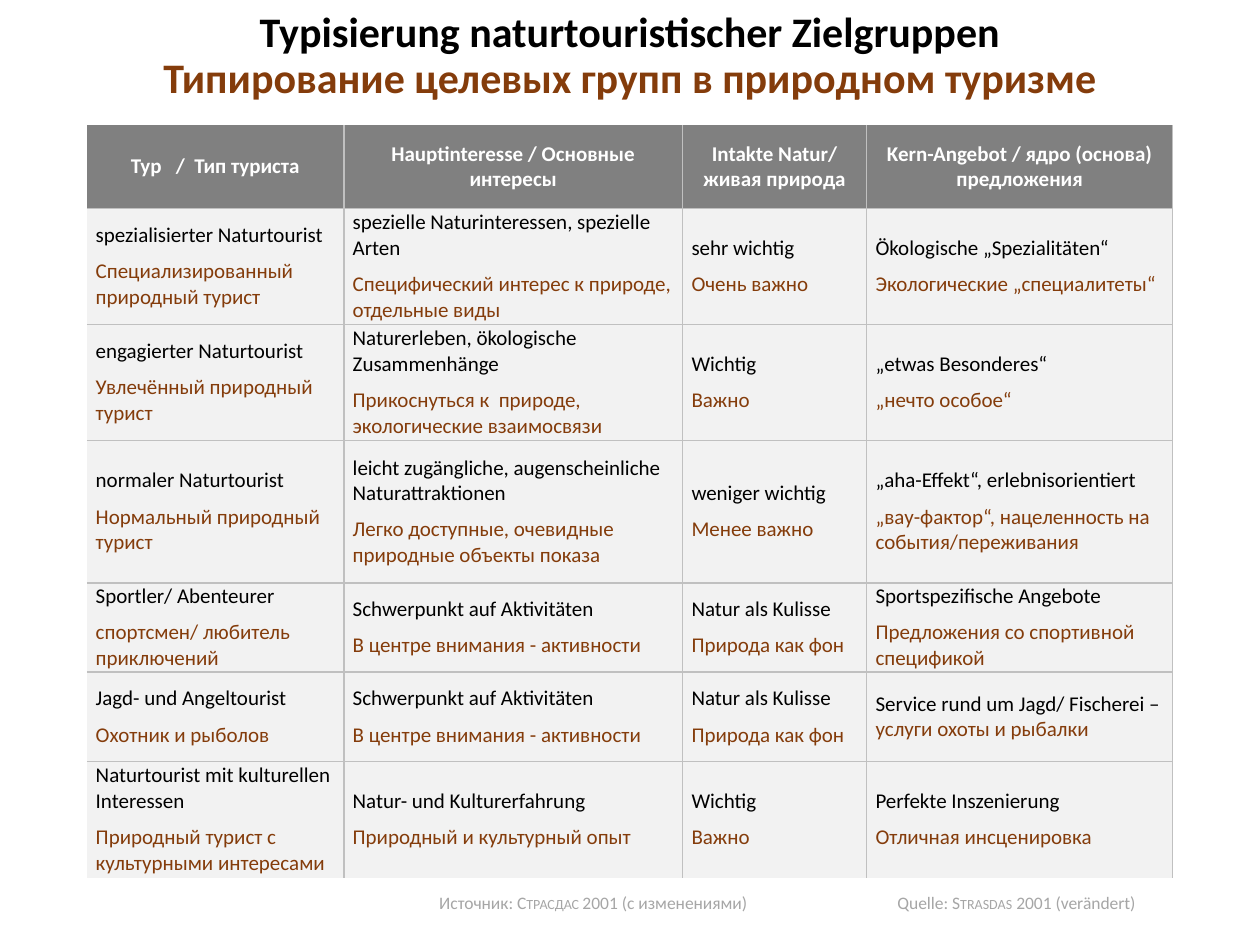
"""Build a slide with a bilingual table of nature tourism target groups."""
import dataclasses

import lxml.etree
import pptx
import pptx.dml.color
import pptx.enum.text
import pptx.oxml.ns
import pptx.util

Cm = pptx.util.Cm
Pt = pptx.util.Pt
ALIGN = pptx.enum.text.PP_ALIGN
MIDDLE = pptx.enum.text.MSO_ANCHOR.MIDDLE


@dataclasses.dataclass(frozen=True)
class Theme:
    font: str = "Calibri"
    german: str = "000000"
    russian: str = "843C0B"
    header_text: str = "FFFFFF"
    header_fill: str = "808080"
    body_fill: str = "F2F2F2"
    border: str = "C0C0C0"
    source: str = "A6A6A6"
    title_size: int = 24
    table_size: int = 12
    source_size: int = 10


TITLE = ("Typisierung naturtouristischer Zielgruppen", "Типирование целевых групп в природном туризме")
HEADERS = (
    "Typ   /  Тип туриста",
    "Hauptinteresse / Основные интересы",
    "Intakte Natur/ живая природа",
    "Kern-Angebot / ядро (основа) предложения",
)
IMPORTANT = ("Wichtig", "Важно")
ACTIVITIES = ("Schwerpunkt auf Aktivitäten", "В центре внимания - активности")
BACKDROP = ("Natur als Kulisse", "Природа как фон")
SAME_LINE_END = "– "
TOURIST_ROWS = (
    (
        ("spezialisierter Naturtourist", "Специализированный природный турист"),
        ("spezielle Naturinteressen, spezielle Arten", "Специфический интерес к природе, отдельные виды"),
        ("sehr wichtig", "Очень важно"),
        ("Ökologische „Spezialitäten“", "Экологические „специалитеты“"),
    ),
    (
        ("engagierter Naturtourist", "Увлечённый природный турист"),
        ("Naturerleben, ökologische Zusammenhänge", "Прикоснуться к  природе, экологические взаимосвязи"),
        IMPORTANT,
        ("„etwas Besonderes“", "„нечто особое“"),
    ),
    (
        ("normaler Naturtourist", "Нормальный природный турист"),
        ("leicht zugängliche, augenscheinliche Naturattraktionen",
         "Легко доступные, очевидные природные объекты показа"),
        ("weniger wichtig", "Менее важно"),
        ("„aha-Effekt“, erlebnisorientiert", "„вау-фактор“, нацеленность на события/переживания"),
    ),
    (
        ("Sportler/ Abenteurer", "спортсмен/ любитель приключений"),
        ACTIVITIES,
        BACKDROP,
        ("Sportspezifische Angebote", "Предложения со спортивной спецификой"),
    ),
    (
        ("Jagd- und Angeltourist", "Охотник и рыболов"),
        ACTIVITIES,
        BACKDROP,
        ("Service rund um Jagd/ Fischerei – ", "услуги охоты и рыбалки"),
    ),
    (
        ("Naturtourist mit kulturellen Interessen", "Природный турист с культурными интересами"),
        ("Natur- und Kulturerfahrung", "Природный и культурный опыт"),
        IMPORTANT,
        ("Perfekte Inszenierung", "Отличная инсценировка"),
    ),
)
COLUMN_WIDTHS = (5.18, 6.83, 3.71, 6.17)
ROW_HEIGHTS = (1.68, 2.34, 2.34, 2.87, 1.8, 1.8, 2.34)


class SlideBuilder:
    def __init__(self, slide, theme):
        self.slide = slide
        self.theme = theme

    def style(self, run, size, color, bold=False):
        run.font.name = self.theme.font
        run.font.size = Pt(size)
        run.font.bold = bold
        run.font.color.rgb = pptx.dml.color.RGBColor.from_string(color)

    def text_box(self, left, top, width, height):
        text_frame = self.slide.shapes.add_textbox(Cm(left), Cm(top), Cm(width), Cm(height)).text_frame
        text_frame.word_wrap = True
        return text_frame

    def title(self, lines, left, top, width, height):
        text_frame = self.text_box(left, top, width, height)
        text_frame.vertical_anchor = MIDDLE
        paragraph = text_frame.paragraphs[0]
        paragraph.text = "\v".join(lines)
        paragraph.alignment = ALIGN.CENTER
        paragraph.line_spacing = 0.9
        for run, color in zip(paragraph.runs, (self.theme.german, self.theme.russian)):
            self.style(run, self.theme.title_size, color, bold=True)

    def source(self, label, author, rest, left, top, width, height):
        paragraph = self.text_box(left, top, width, height).paragraphs[0]
        paragraph.alignment = ALIGN.RIGHT
        for text in (label, author, rest):
            run = paragraph.add_run()
            run.text = text
            self.style(run, self.theme.source_size, self.theme.source)
            if text == author:
                run.font._element.set("cap", "small")

    def borders(self, cell, sides):
        properties = cell._tc.get_or_add_tcPr()
        qn = pptx.oxml.ns.qn
        for index, (side, visible) in enumerate(sides.items()):
            line = lxml.etree.Element(qn(f"a:ln{side}"), w=str(Pt(1)))
            if visible:
                fill = lxml.etree.SubElement(line, qn("a:solidFill"))
                lxml.etree.SubElement(fill, qn("a:srgbClr"), val=self.theme.border)
            else:
                lxml.etree.SubElement(line, qn("a:noFill"))
            properties.insert(index, line)

    def cell(self, cell, paragraphs, fill, alignment, bold=False):
        cell.margin_left = cell.margin_right = Cm(0.18)
        cell.margin_top = cell.margin_bottom = 0
        cell.vertical_anchor = MIDDLE
        cell.fill.solid()
        cell.fill.fore_color.rgb = pptx.dml.color.RGBColor.from_string(fill)
        for index, runs in enumerate(paragraphs):
            paragraph = cell.text_frame.add_paragraph() if index else cell.text_frame.paragraphs[0]
            paragraph.alignment = alignment
            paragraph.space_before = paragraph.space_after = Pt(3)
            for text, color in runs:
                run = paragraph.add_run()
                run.text = text
                self.style(run, self.theme.table_size, color, bold)

    def body_paragraphs(self, german, russian):
        runs = [(german, self.theme.german), (russian, self.theme.russian)]
        return [runs] if german.endswith(SAME_LINE_END) else [[run] for run in runs]

    def table(self, headers, rows, left, top):
        table = self.slide.shapes.add_table(
            len(ROW_HEIGHTS), len(COLUMN_WIDTHS), Cm(left), Cm(top),
            Cm(sum(COLUMN_WIDTHS)), Cm(sum(ROW_HEIGHTS)),
        ).table
        for column, width in zip(table.columns, COLUMN_WIDTHS):
            column.width = Cm(width)
        for row, height in zip(table.rows, ROW_HEIGHTS):
            row.height = Cm(height)
        for column, header in enumerate(headers):
            runs = [(header, self.theme.header_text)]
            self.cell(table.cell(0, column), [runs], self.theme.header_fill, ALIGN.CENTER, bold=True)
        for row, entries in enumerate(rows, start=1):
            for column, entry in enumerate(entries):
                self.cell(table.cell(row, column), self.body_paragraphs(*entry),
                          self.theme.body_fill, ALIGN.LEFT)
        for row in range(len(ROW_HEIGHTS)):
            for column in range(len(COLUMN_WIDTHS)):
                self.borders(table.cell(row, column), {
                    "L": column > 0, "R": True, "T": row > 0, "B": row < len(rows),
                })


def main():
    presentation = pptx.Presentation()
    presentation.slide_width = Cm(25.4)
    presentation.slide_height = Cm(19.05)
    slide = presentation.slides.add_slide(presentation.slide_layouts[6])
    builder = SlideBuilder(slide, Theme())
    builder.title(TITLE, 1.75, -0.69, 21.9, 3.68)
    builder.table(HEADERS, TOURIST_ROWS, 1.75, 2.52)
    builder.source("Quelle: ", "Strasdas", " 2001 (verändert)", 13.82, 17.86, 9.32, 0.7)
    builder.source("Источник: ", "Страсдас ", "2001 (с изменениями)", 5.99, 17.86, 9.32, 0.7)
    presentation.save("out.pptx")


if __name__ == "__main__":
    main()
